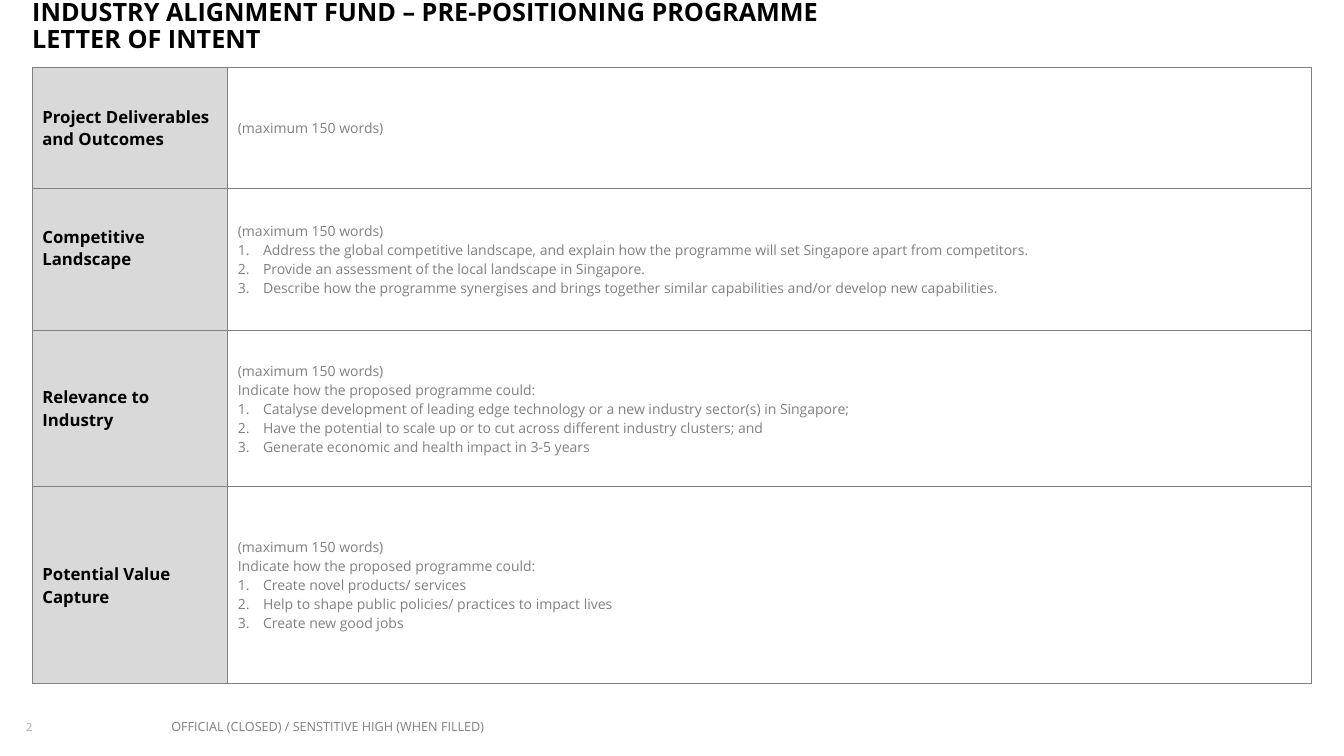
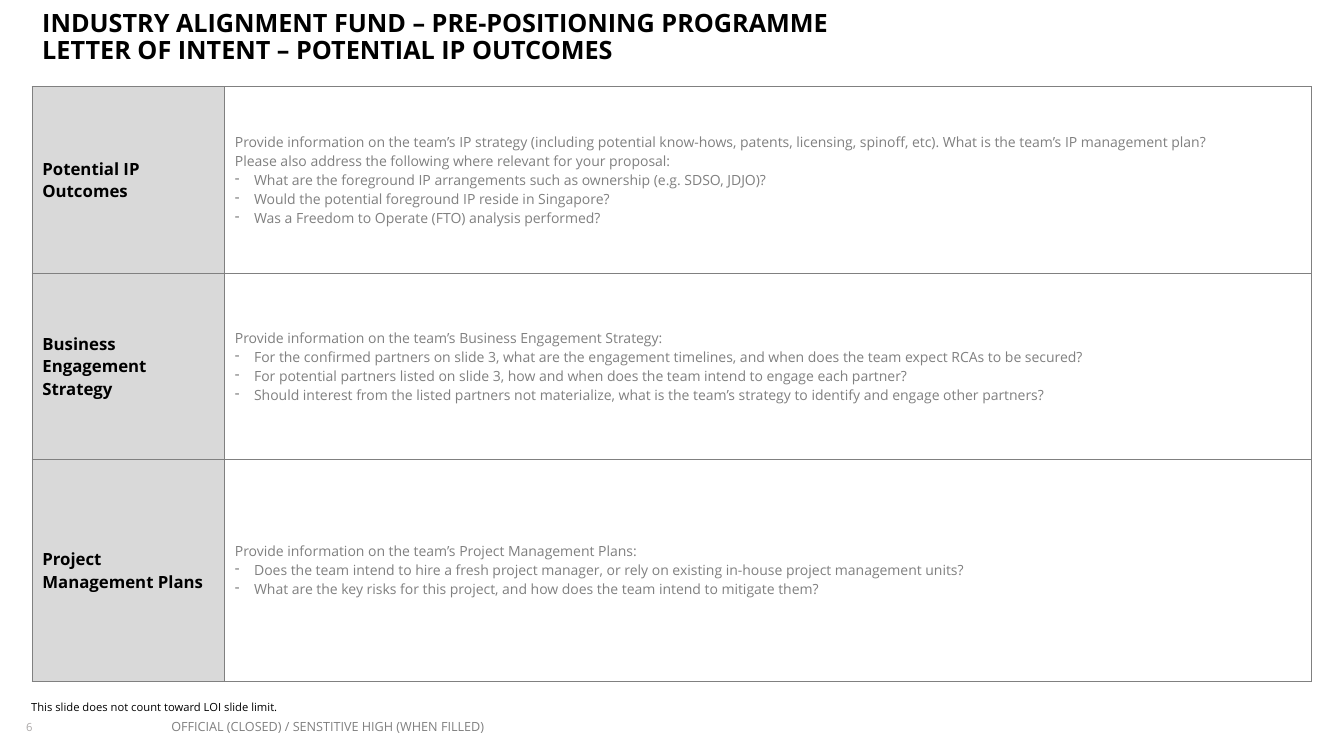
"""Build two letter-of-intent form slides."""
import lxml.etree
import pptx
import pptx.dml.color
import pptx.enum.text
import pptx.oxml.ns
import pptx.util

FONT = "Open Sans"
C = {"ink": "000000", "grey": "808080", "number": "ABA8A8", "label": "D9D9D9"}
FOOTER = "OFFICIAL (CLOSED) / SENSTITIVE HIGH (WHEN FILLED)"
PROGRAMME = "INDUSTRY ALIGNMENT FUND – PRE-POSITIONING PROGRAMME"
LIMIT = "(maximum 150 words)"
COULD = "Indicate how the proposed programme could:"
LEFT, WIDTH, FOOT = 2.4, 95.2, 95.07
qn = pptx.oxml.ns.qn
sub = lxml.etree.SubElement

prs = pptx.Presentation()
prs.slide_width = pptx.util.Inches(13.33)
prs.slide_height = pptx.util.Inches(7.5)
X, Y = prs.slide_width / 100, prs.slide_height / 100


def add_run(p, text, size, color, bold=False):
    r = p.add_run()
    r.text = text
    r.font.name = FONT
    r.font.size = pptx.util.Pt(size)
    r.font.bold = bold
    r.font.color.rgb = pptx.dml.color.RGBColor.from_string(C[color])


def add_text(s, at, lines, size, color, bold=False, inset=(0, 0), spacing=1.0):
    x, y, w, h = at
    sp = s.shapes.add_textbox(int(x * X), int(y * Y), int(w * X), int(h * Y))
    tf = sp.text_frame
    tf.word_wrap = True
    tf.margin_left = tf.margin_right = pptx.util.Inches(inset[0])
    tf.margin_top = tf.margin_bottom = pptx.util.Inches(inset[1])
    p = tf.paragraphs[0]
    p.line_spacing = spacing
    for i, line in enumerate(lines):
        if i:
            p.add_line_break()
        add_run(p, line, size, color, bold)


slides = [
    {
        "number": "2",
        "title": [PROGRAMME, "LETTER OF INTENT"],
        "title_at": (LEFT, 0, 84.3, 6.93),
        "inset": (0, 0),
        "top": 8.93,
        "label_width": 14.55,
        "bullet": ("a:buAutoNum", {"type": "arabicPeriod"}, 0.25),
        "note": None,
        "rows": [
            (16, 0.05, "Project Deliverables and Outcomes", [LIMIT], []),
            (18.8, 0.28, "Competitive Landscape", [LIMIT], [
                "Address the global competitive landscape, and explain how the programme will set Singapore apart from competitors.",
                "Provide an assessment of the local landscape in Singapore.",
                "Describe how the programme synergises and brings together similar capabilities and/or develop new capabilities.",
            ]),
            (20.67, 0.05, "Relevance to Industry", [LIMIT, COULD], [
                "Catalyse development of leading edge technology or a new industry sector(s) in Singapore;",
                "Have the potential to scale up or to cut across different industry clusters; and",
                "Generate economic and health impact in 3-5 years",
            ]),
            (26, 0.05, "Potential Value Capture", [LIMIT, COULD], [
                "Create novel products/ services",
                "Help to shape public policies/ practices to impact lives",
                "Create new good jobs",
            ]),
        ],
    },
    {
        "number": "6",
        "title": [PROGRAMME, "LETTER OF INTENT – POTENTIAL IP OUTCOMES"],
        "title_at": (LEFT, 0.8, 82.7, 6.93),
        "inset": (0.1, 0.05),
        "top": 11.47,
        "label_width": 14.33,
        "bullet": ("a:buChar", {"char": "-"}, 0.19),
        "note": "This slide does not count toward LOI slide limit.",
        "rows": [
            (24.67, 0.05, "Potential IP Outcomes", [
                "Provide information on the team’s IP strategy (including potential know-hows, patents, licensing, spinoff, etc). What is the team’s IP management plan?",
                "Please also address the following where relevant for your proposal:",
            ], [
                "What are the foreground IP arrangements such as ownership (e.g. SDSO, JDJO)?",
                "Would the potential foreground IP reside in Singapore?",
                "Was a Freedom to Operate (FTO) analysis performed?",
            ]),
            (24.67, 0.05, "Business Engagement Strategy", [
                "Provide information on the team’s Business Engagement Strategy:",
            ], [
                "For the confirmed partners on slide 3, what are the engagement timelines, and when does the team expect RCAs to be secured?",
                "For potential partners listed on slide 3, how and when does the team intend to engage each partner?",
                "Should interest from the listed partners not materialize, what is the team’s strategy to identify and engage other partners?",
            ]),
            (29.33, 0.05, "Project Management Plans", [
                "Provide information on the team’s Project Management Plans:",
            ], [
                "Does the team intend to hire a fresh project manager, or rely on existing in-house project management units?",
                "What are the key risks for this project, and how does the team intend to mitigate them?",
            ]),
        ],
    },
]

for d in slides:
    s = prs.slides.add_slide(prs.slide_layouts[6])
    add_text(s, (1.95, FOOT, 5.9, 2.53), [d["number"]], 8, "number", spacing=1.1)
    add_text(s, d["title_at"], d["title"], 18, "ink", True, d["inset"], 0.9)

    rows = d["rows"]
    height = sum(row[0] for row in rows)
    tbl = s.shapes.add_table(len(rows), 2, int(LEFT * X), int(d["top"] * Y),
                             int(WIDTH * X), int(height * Y)).table
    tbl.first_row = tbl.horz_banding = False
    tbl.columns[0].width = int(d["label_width"] * X)
    tbl.columns[1].width = int((WIDTH - d["label_width"]) * X)
    tag, attrs, indent = d["bullet"]
    hang = pptx.util.Inches(indent)

    for i, (share, bottom, label, intro, items) in enumerate(rows):
        tbl.rows[i].height = int(share * Y)
        head, body = tbl.cell(i, 0), tbl.cell(i, 1)
        for cell in (head, body):
            cell.vertical_anchor = pptx.enum.text.MSO_ANCHOR.MIDDLE
            for side in ("a:lnL", "a:lnR", "a:lnT", "a:lnB"):
                ln = sub(cell._tc.get_or_add_tcPr(), qn(side), w=str(pptx.util.Pt(1)))
                sub(sub(ln, qn("a:solidFill")), qn("a:srgbClr"), val=C["grey"])
        head.fill.solid()
        head.fill.fore_color.rgb = pptx.dml.color.RGBColor.from_string(C["label"])
        body.fill.background()
        head.margin_bottom = pptx.util.Inches(bottom)
        add_run(head.text_frame.paragraphs[0], label, 12, "ink", True)

        tf = body.text_frame
        for j, line in enumerate(intro + items):
            p = tf.add_paragraph() if j else tf.paragraphs[0]
            if j >= len(intro):
                pPr = p._p.get_or_add_pPr()
                pPr.set("marL", str(hang))
                pPr.set("indent", str(-hang))
                sub(pPr, qn(tag), attrs)
            add_run(p, line, 10, "grey")

    add_text(s, (12.75, FOOT, 40, 2.53), [FOOTER], 9, "grey")
    if d["note"]:
        add_text(s, (1.58, 92, 72.1, 3.2), [d["note"]], 8, "ink", inset=(0.1, 0.05))

prs.save("out.pptx")
